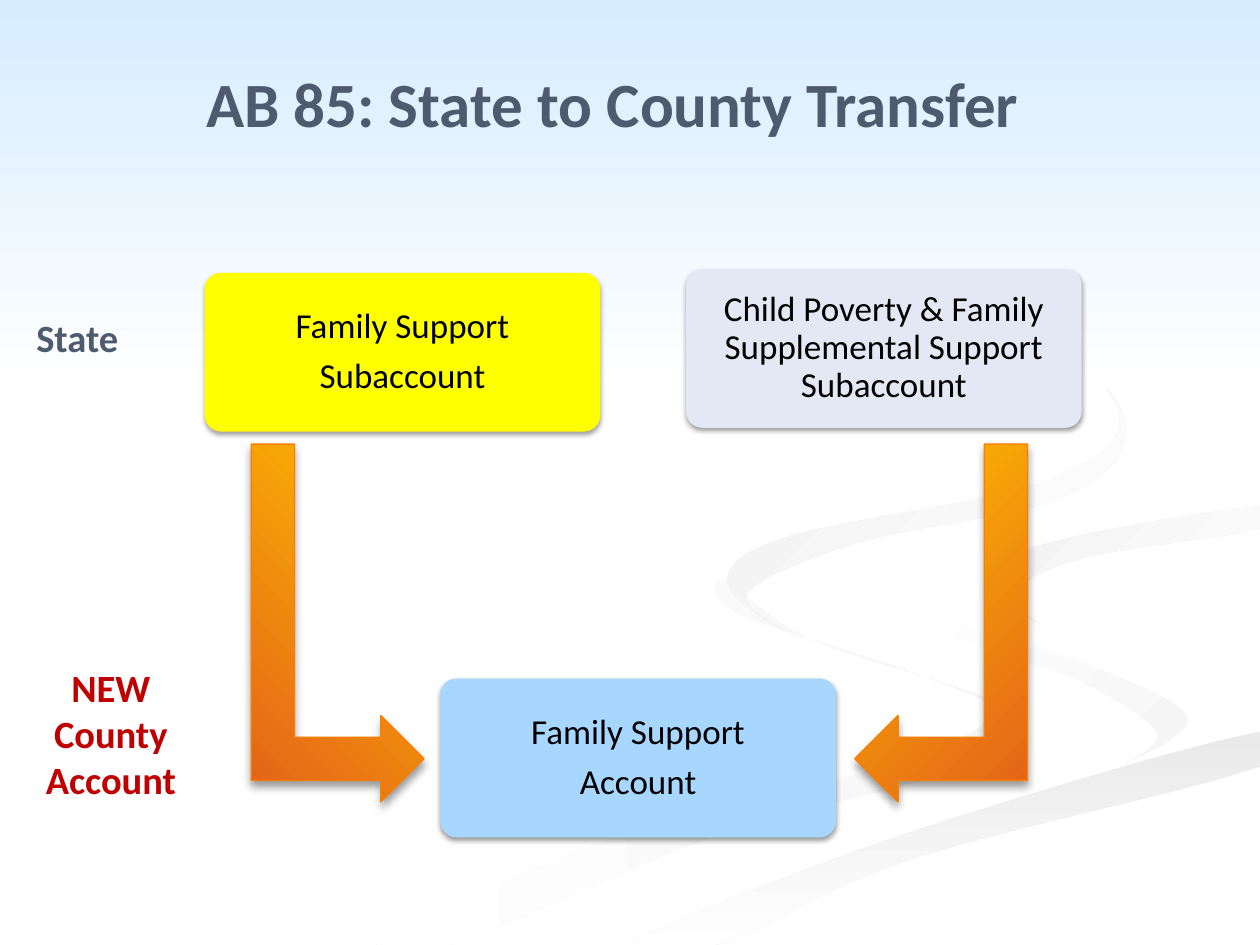
from lxml import etree
from pptx import Presentation
from pptx import util as u
from pptx.dml import color
from pptx.enum import shapes, text
from pptx.oxml import ns

FONT = "Calibri"
SLATE, RED, BLACK, WHITE = "4E5B6F", "C00000", "000000", "FFFFFF"

RIBBONS = [
    ([(7.8, 5.53), (6.42, 5.07), (5.75, 4.6), (5.86, 4.87), (7.28, 5.35), (7.86, 5.66),
      (7.14, 6.05), (4.99, 6.61), (3, 7.49), (3.61, 7.49), (5.64, 6.65), (7.69, 6.09),
      (8, 5.81)], "F5F5F5", WHITE, 180),
    ([(9.43, 5.7), (8.7, 5.3), (7.45, 4.9), (7.24, 4.64), (7.46, 5), (8.54, 5.39),
      (9.18, 5.81), (8.94, 6.05)], WHITE, "F5F5F5", 45),
    ([(5.03, 7.49), (5.71, 7.49), (7.22, 6.82), (9.98, 6.09), (9.98, 5.81), (7.64, 6.47),
      (5.99, 7.06)], "EAEAEA", WHITE, 90),
    ([(7.81, 4.6), (8.26, 4.96), (8.05, 4.72), (8.59, 4.43), (9.98, 4.2), (9.98, 4.02),
      (8.35, 4.3)], "F1F1F1", WHITE, 45),
    ([(6.83, 4.3), (8.41, 3.96), (8.94, 3.44), (8.54, 2.83), (7.62, 2.33), (8.55, 2.85),
      (8.88, 3.41), (8.18, 3.86), (6.25, 4.26), (5.77, 4.62), (6.22, 5), (5.93, 4.7)],
     "EDEDED", WHITE, 45),
]


def rgb(value):
    return color.RGBColor.from_string(value)


def smooth_outline(points, steps=6):
    count = len(points)
    for index in range(count):
        corners = [points[(index + shift) % count] for shift in (-1, 0, 1, 2)]
        for step in range(steps):
            t = step / steps
            yield tuple(
                b + t * (c - a) / 2 + t**2 * (2*a - 5*b + 4*c - d) / 2
                + t**3 * (3*b - a - 3*c + d) / 2
                for a, b, c, d in zip(*corners))


def paint_gradient(shape, start, end, angle):
    shape.fill.gradient()
    shape.fill.gradient_angle = (360 - angle) % 360
    for stop, value, position in zip(shape.fill.gradient_stops, (start, end), (0, 1)):
        stop.color.rgb = rgb(value)
        stop.position = position


def outline(shape, value):
    shape.line.color.rgb = rgb(value)
    shape.line.width = u.Pt(0.75)


def cast_shadow(shape, alpha, blur, distance):
    shape.shadow.inherit = False
    effects = shape._element.spPr.find(ns.qn("a:effectLst"))
    shadow = etree.SubElement(effects, ns.qn("a:outerShdw"), blurRad=str(u.Pt(blur)),
                              dist=str(u.Pt(distance)), dir="5400000", rotWithShape="0")
    tint = etree.SubElement(shadow, ns.qn("a:srgbClr"), val=BLACK)
    etree.SubElement(tint, ns.qn("a:alpha"), val=str(alpha * 1000))


def style(para, size, value, bold=False, align=text.PP_ALIGN.CENTER):
    para.alignment = align
    for span in para.runs:
        span.font.name = FONT
        span.font.size = u.Pt(size)
        span.font.bold = bold
        span.font.color.rgb = rgb(value)


def draw_backdrop(page):
    parts = []
    for points, start, end, angle in RIBBONS:
        curve = [(u.Inches(x), u.Inches(y)) for x, y in smooth_outline(points)]
        builder = page.shapes.build_freeform(*curve[0])
        builder.add_line_segments(curve[1:], close=True)
        parts.append((builder.convert_to_shape(), start, end, angle))
    sky = page.shapes.add_shape(shapes.MSO_SHAPE.RECTANGLE, 0, 0, u.Inches(10), u.Inches(3.08))
    parts.append((sky, "D6ECFF", WHITE, 90))
    for part, start, end, angle in parts:
        part.shadow.inherit = False
        part.line.fill.background()
        paint_gradient(part, start, end, angle)


def place_title(page, left, top, width, height, words):
    title = page.shapes.title
    page.shapes._spTree.append(title._element)
    title.left, title.top, title.width, title.height = map(u.Inches, (left, top, width, height))
    title.text_frame.text = words
    title.text_frame.vertical_anchor = text.MSO_ANCHOR.MIDDLE
    style(title.text_frame.paragraphs[0], 36, SLATE, bold=True)


def add_account(page, left, top, fill, words):
    box = page.shapes.add_shape(shapes.MSO_SHAPE.ROUNDED_RECTANGLE, u.Inches(left),
                                u.Inches(top), u.Inches(3.13), u.Inches(1.25))
    box.adjustments[0] = 0.1
    box.fill.solid()
    box.fill.fore_color.rgb = rgb(fill)
    outline(box, fill)
    cast_shadow(box, 38, 3.1, 1.6)
    frame = box.text_frame
    frame.text = words
    frame.word_wrap = True
    frame.vertical_anchor = text.MSO_ANCHOR.MIDDLE
    frame.margin_left = frame.margin_right = u.Inches(0.16)
    frame.margin_top = frame.margin_bottom = u.Inches(0.16)
    for para in frame.paragraphs:
        style(para, 20, BLACK)
        para.line_spacing = 0.9
        para.space_after = u.Pt(7)


def add_arrow(page, left, top, rotation, mirrored):
    arrow = page.shapes.add_shape(shapes.MSO_SHAPE.BENT_UP_ARROW, u.Inches(left),
                                  u.Inches(top), u.Inches(2.84), u.Inches(1.37))
    arrow.rotation = rotation
    if mirrored:
        arrow._element.spPr.xfrm.set("flipH", "1")
    paint_gradient(arrow, "FFC000", "E36119", 45)
    outline(arrow, "FC7E00")
    cast_shadow(arrow, 40, 5, 3)


def add_label(page, left, top, width, height, words, value, align, wrap):
    label = page.shapes.add_textbox(*map(u.Inches, (left, top, width, height)))
    label.text_frame.text = words
    label.text_frame.word_wrap = wrap
    style(label.text_frame.paragraphs[0], 22, value, bold=True, align=align)


def main():
    deck = Presentation()
    deck.slide_width, deck.slide_height = u.Inches(10), u.Inches(7.5)
    page = deck.slides.add_slide(deck.slide_layouts[5])
    draw_backdrop(page)
    place_title(page, 0.4, 0.23, 8.92, 1.17, "AB 85: State to County Transfer")
    add_account(page, 3.5, 5.39, "A7D6FF", "Family Support\nAccount")
    add_account(page, 5.45, 2.14, "E3E8F4",
                "Child Poverty & Family Supplemental Support Subaccount")
    add_account(page, 1.63, 2.17, "FFFF00", "Family Support\nSubaccount")
    add_label(page, 0.19, 2.44, 0.87, 0.47, "State", SLATE, text.PP_ALIGN.LEFT, False)
    add_arrow(page, 1.26, 4.26, 90, False)
    add_arrow(page, 6.05, 4.26, 270, True)
    add_label(page, 0.13, 5.22, 1.5, 1.21, "NEW County Account", RED, text.PP_ALIGN.CENTER, True)
    deck.save("out.pptx")


if __name__ == "__main__":
    main()
